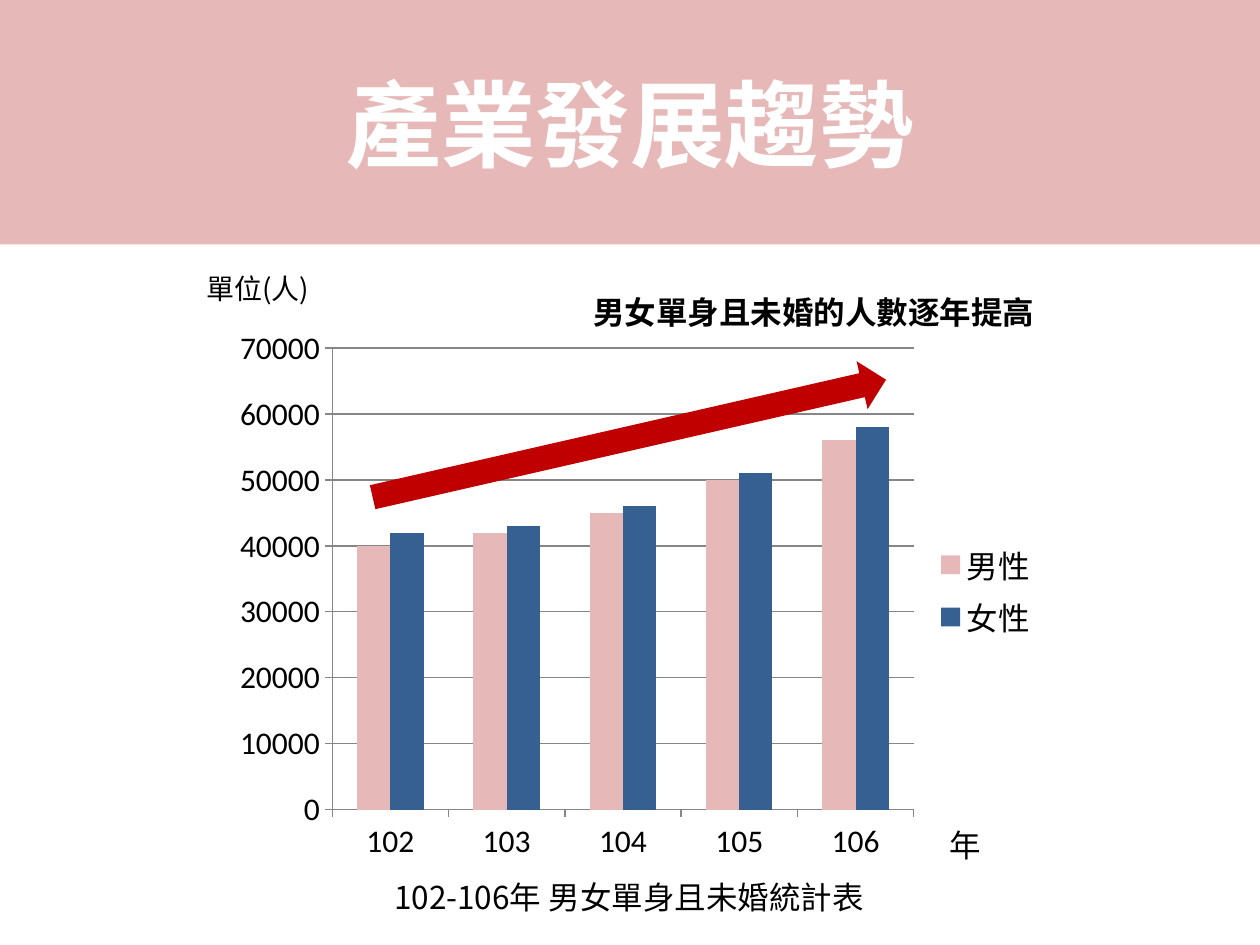
import pptx
import pptx.chart.data
import pptx.dml.color
import pptx.enum.chart
import pptx.enum.shapes
import pptx.enum.text
import pptx.oxml
import pptx.oxml.ns
import pptx.util
from pptx.util import Inches

CJK_FONT = "Noto Sans CJK SC"
PINK, BLUE, RED = "E6B9B8", "376092", "C00000"
BLACK, WHITE, GREY = "000000", "FFFFFF", "868686"


def rgb(value):
    return pptx.dml.color.RGBColor.from_string(value)


def write(frame, text, size, color, bold):
    run = frame.paragraphs[0].add_run()
    run.text = text
    settings = {"name": CJK_FONT, "size": pptx.util.Pt(size), "bold": bold}
    for attribute, value in settings.items():
        setattr(run.font, attribute, value)
    run.font.color.rgb = rgb(color)
    # East Asian characters take their own typeface element
    east_asian = pptx.oxml.parse_xml(
        f'<a:ea {pptx.oxml.ns.nsdecls("a")} typeface="{CJK_FONT}"/>')
    run.font._element.find(pptx.oxml.ns.qn("a:latin")).addnext(east_asian)


presentation = pptx.Presentation()
presentation.slide_width = Inches(10)
presentation.slide_height = Inches(7.5)
slide = presentation.slides.add_slide(presentation.slide_layouts[5])

# Title band
title = slide.shapes.title
band = {"left": 0, "top": 0, "width": Inches(10), "height": Inches(1.94)}
for attribute, value in band.items():
    setattr(title, attribute, value)
title.fill.solid()
title.fill.fore_color.rgb = rgb(PINK)
title.text_frame.vertical_anchor = pptx.enum.text.MSO_ANCHOR.MIDDLE
title.text_frame.paragraphs[0].alignment = pptx.enum.text.PP_ALIGN.CENTER
write(title.text_frame, "產業發展趨勢", 54, WHITE, True)

# Chart of single people by year
people = pptx.chart.data.CategoryChartData(number_format="General")
people.categories = ["102", "103", "104", "105", "106"]
people.add_series("男性", [40000, 42000, 45000, 50000, 56000])
people.add_series("女性", [42000, 43000, 46000, 51000, 58000])
chart = slide.shapes.add_chart(
    pptx.enum.chart.XL_CHART_TYPE.COLUMN_CLUSTERED,
    Inches(1.67), Inches(2.47), Inches(6.67), Inches(4.44), people).chart
chart.has_title = False
chart.font.name = "Calibri"
chart.font.size = pptx.util.Pt(18)
chart.font.color.rgb = rgb(BLACK)
chart.has_legend = True
chart.legend.position = pptx.enum.chart.XL_LEGEND_POSITION.RIGHT
chart.legend.include_in_layout = False

columns = chart.plots[0]
columns.gap_width = 150
columns.overlap = 0
columns.vary_by_categories = False
for series, color in zip(columns.series, (PINK, BLUE)):
    series.format.fill.solid()
    series.format.fill.fore_color.rgb = rgb(color)

# Axes and gridlines
years, counts = chart.category_axis, chart.value_axis
counts.minimum_scale, counts.maximum_scale, counts.major_unit = 0, 70000, 10000
counts.has_major_gridlines = True
for axis in (years, counts):
    axis.major_tick_mark = pptx.enum.chart.XL_TICK_MARK.OUTSIDE
    axis.minor_tick_mark = pptx.enum.chart.XL_TICK_MARK.NONE
for lined in (years, counts, counts.major_gridlines):
    lined.format.line.color.rgb = rgb(GREY)
    lined.format.line.width = pptx.util.Pt(0.75)

# Fixed inner plot area
plot_area = chart._chartSpace.chart.plotArea
for layout in plot_area.findall(pptx.oxml.ns.qn("c:layout")):
    plot_area.remove(layout)
place = "".join(f'<c:{tag} val="{value}"/>' for tag, value in (
    ("layoutTarget", "inner"), ("xMode", "edge"), ("yMode", "edge"),
    ("x", 0.145), ("y", 0.066), ("w", 0.692), ("h", 0.825)))
plot_area.insert(0, pptx.oxml.parse_xml(
    f'<c:layout {pptx.oxml.ns.nsdecls("c")}>'
    f'<c:manualLayout>{place}</c:manualLayout></c:layout>'))

# Rising trend arrow
trend = slide.shapes.add_shape(
    pptx.enum.shapes.MSO_SHAPE.UP_ARROW,
    Inches(4.8), Inches(1.39), Inches(0.39), Inches(4.18))
trend.rotation = 77.1
trend.shadow.inherit = False
trend.fill.solid()
trend.fill.fore_color.rgb = rgb(RED)
trend.line.fill.background()

# Axis units, caption and finding
labels = [
    ("年", 7.44, 6.51, 0.55, 0.4, 18, False),
    ("單位(人)", 1.54, 2.11, 1.42, 0.37, 16, False),
    ("102-106年 男女單身且未婚統計表", 3.03, 6.92, 6.46, 0.4, 18, False),
    ("男女單身且未婚的人數逐年提高", 4.61, 2.28, 3.97, 0.4, 18, True),
]
for text, left, top, width, height, size, bold in labels:
    label = slide.shapes.add_textbox(
        Inches(left), Inches(top), Inches(width), Inches(height))
    label.text_frame.word_wrap = True
    label.text_frame.auto_size = pptx.enum.text.MSO_AUTO_SIZE.SHAPE_TO_FIT_TEXT
    write(label.text_frame, text, size, BLACK, bold)

presentation.save("out.pptx")
